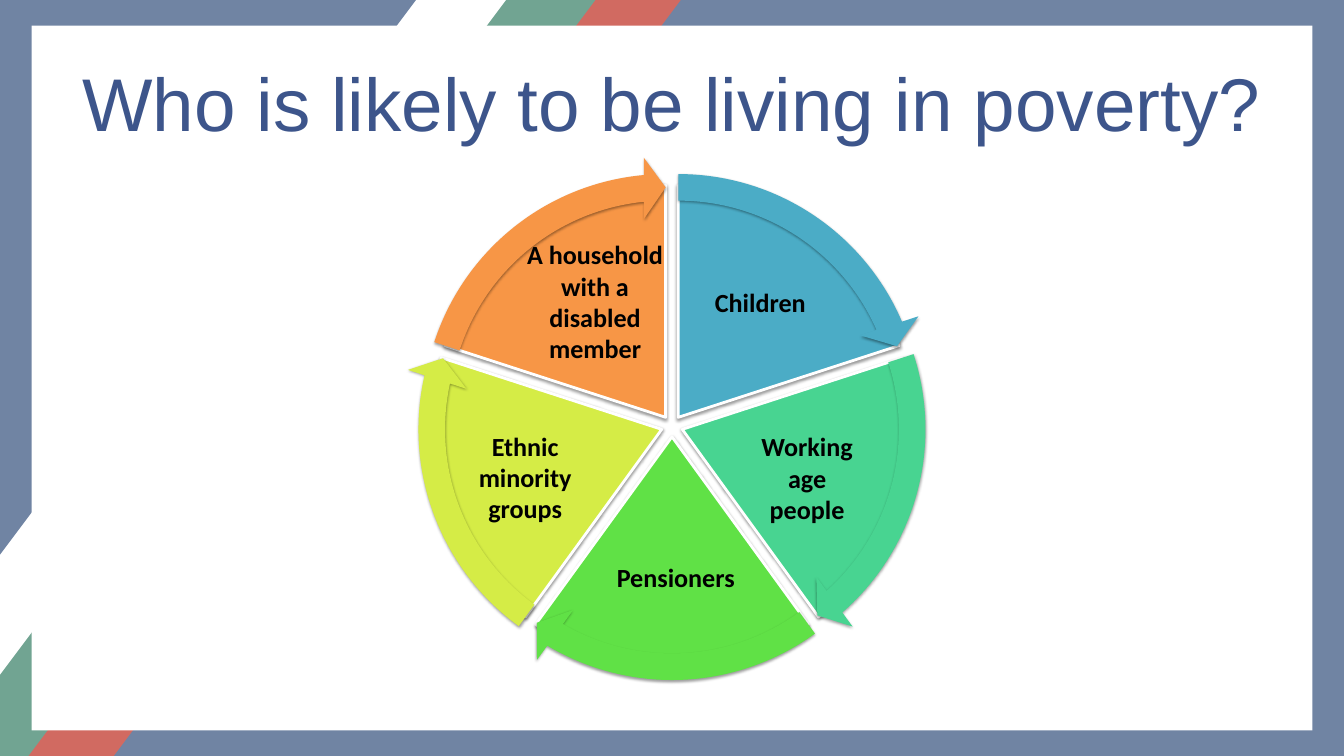
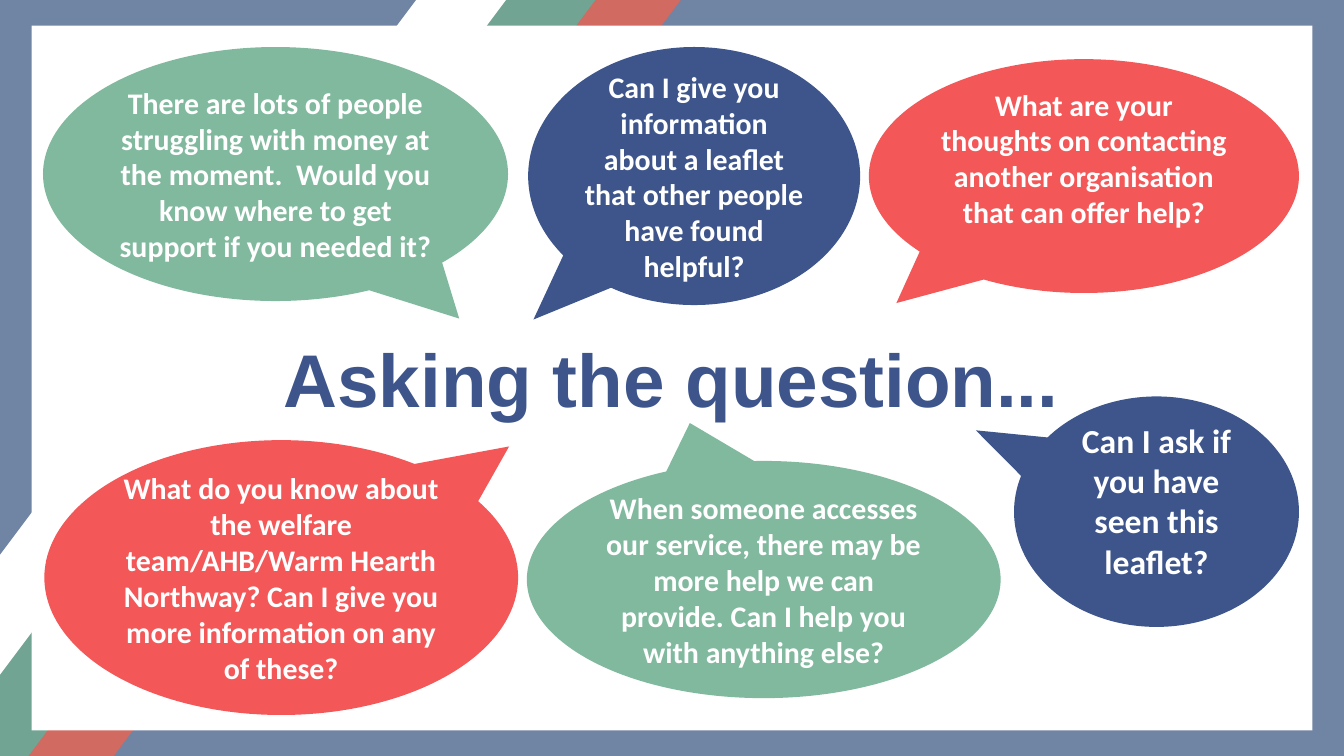
from math import cos, radians, sin

from lxml.etree import SubElement
from pptx import Presentation
from pptx.dml.color import RGBColor
from pptx.enum.shapes import MSO_SHAPE
from pptx.enum.text import MSO_ANCHOR, MSO_AUTO_SIZE, PP_ALIGN
from pptx.oxml.ns import qn
from pptx.util import Inches, Pt

COLS, ROWS = 20, 11.25
TITLE_ONLY = 5
COLORS = {
    "slate": "7084A3", "brick": "D16A61", "sage": "71A492", "white": "FFFFFF",
    "black": "000000", "navy": "3D558B", "mint": "81B99E", "coral": "F35757",
    "teal": "4BACC6", "jade": "48D491", "green": "60E146", "lime": "D5EC46",
    "orange": "F79646",
}
SLANT = 0.75
STRIPES = [("brick", 10.13), ("sage", 8.86), ("white", 7.53), ("slate", 6.19)]
SIDE, TOP = 0.47, 0.38

HUB = (10, 6.34)
PUSH, PIE, RING = 0.16, 6.9, 7.76
FIRST, SWEEP = 270, 72
UNIT = 0.6
HEAD = 3.275
WEDGES = ["teal", "jade", "green", "lime", "orange"]
GROUPS = [
    ("Children", (10.54, 4.21, 1.95, 0.57), PP_ALIGN.LEFT),
    ("Working age people", (11.12, 6.36, 1.78, 1.51), PP_ALIGN.CENTER),
    ("Pensioners", (9.08, 8.31, 1.98, 0.57), PP_ALIGN.LEFT),
    ("Ethnic minority groups", (7, 6.35, 1.63, 1.51), PP_ALIGN.CENTER),
    ("A household with a disabled member", (7.74, 3.5, 2.23, 1.99), PP_ALIGN.CENTER),
]

BUBBLES = [
    ("There are lots of people struggling with money at the moment.  Would you "
     "know where to get support if you needed it?",
     (0.64, 0.7, 6.92, 3.78), (0.395, 0.569), "mint", 32, 0.05),
    ("What are your thoughts on contacting another organisation that can offer help?",
     (12.93, 0.88, 6.4, 3.48), (-0.436, 0.543), "coral", 32, 0.59),
    ("What do you know about the welfare team/AHB/Warm Hearth Northway? Can I give "
     "you more information on any of these?",
     (0.66, 6.55, 7.05, 4.09), (0.481, -0.477), "coral", 32, 0.05),
    ("Can I give you information about a leaflet that other people have found helpful?",
     (7.86, 0.7, 4.94, 3.84), (-0.484, 0.556), "navy", 32, 0.05),
    ("When someone accesses our service, there may be more help we can provide. "
     "Can I help you with anything else?",
     (7.84, 6.86, 7.05, 3.53), (-0.156, -0.66), "mint", 32, 0.05),
    ("Can I ask if you have seen this leaflet?",
     (15.09, 5.9, 4.24, 3.43), (-0.634, -0.353), "navy", 36, 0.39),
]


def tint(name):
    """Return the named colour."""
    return RGBColor.from_string(COLORS[name])


def cells(*spans):
    """Turn columns and rows of the slide grid into lengths."""
    return [Inches(span) for span in spans]


def paint(shape, fill, line=None):
    """Fill a shape and give it a line, or none, and no shadow."""
    shape.shadow.inherit = False
    shape.fill.solid()
    shape.fill.fore_color.rgb = tint(fill)
    if line:
        shape.line.color.rgb = tint(line)
        shape.line.width = Pt(3)
    else:
        shape.line.fill.background()
    return shape


def shade(shape):
    """Drop a soft shadow straight below a shape."""
    effects = shape.element.spPr.find(qn("a:effectLst"))
    drop = SubElement(effects, qn("a:outerShdw"), blurRad=str(Pt(3.1)),
                      dist=str(Pt(1.6)), dir="5400000", rotWithShape="0")
    ink = SubElement(drop, qn("a:srgbClr"), val=COLORS["black"])
    SubElement(ink, qn("a:alpha"), val="38000")


def preset(slide, kind, box, fill, tweaks=(), line=None):
    """Add a painted preset shape with its adjustments."""
    shape = slide.shapes.add_shape(kind, *cells(*box))
    for spot, tweak in enumerate(tweaks):
        shape.adjustments[spot] = tweak
    return paint(shape, fill, line)


def write(shape, text, size, color, font="Calibri", bold=True, align=PP_ALIGN.CENTER):
    """Put one formatted paragraph into a shape."""
    frame = shape.text_frame
    frame.text = text
    frame.word_wrap = True
    para = frame.paragraphs[0]
    para.alignment = align
    face = para.runs[0].font
    face.name, face.size, face.bold = font, Pt(size), bold
    face.color.rgb = tint(color)
    return frame


def stripe(slide, fill, reach):
    """Fill the top left corner up to a slanted edge."""
    drop = reach / SLANT
    points = [(reach, 0)]
    if drop > ROWS:
        points += [(reach - ROWS * SLANT, ROWS), (0, ROWS)]
    else:
        points += [(0, drop)]
    pen = slide.shapes.build_freeform(0, 0, scale=1)
    pen.add_line_segments([cells(*point) for point in points], close=True)
    paint(pen.convert_to_shape(), fill)


def start(deck, text, box, bold):
    """Add a slide with the striped border and its title."""
    slide = deck.slides.add_slide(deck.slide_layouts[TITLE_ONLY])
    preset(slide, MSO_SHAPE.RECTANGLE, (0, 0, COLS, ROWS), "slate")
    for fill, reach in STRIPES:
        stripe(slide, fill, reach)
    panel = (SIDE, TOP, COLS - 2 * SIDE, ROWS - 2 * TOP)
    preset(slide, MSO_SHAPE.RECTANGLE, panel, "white")
    title = slide.shapes.title
    title.left, title.top, title.width, title.height = cells(*box)
    frame = write(title, text, 80, "navy", "Arial", bold)
    frame.auto_size = MSO_AUTO_SIZE.NONE
    frame.vertical_anchor = MSO_ANCHOR.TOP
    slide.shapes.element.append(title.element)
    return slide


def wheel(slide):
    """Draw five wedges pushed out from the hub, then their arrows."""
    for kind, size in ((MSO_SHAPE.PIE, PIE), (MSO_SHAPE.CIRCULAR_ARROW, RING)):
        for spot, fill in enumerate(WEDGES):
            begin = (FIRST + SWEEP * spot) % 360
            end = (begin + SWEEP) % 360
            mid = radians(begin + SWEEP / 2)
            left = HUB[0] + PUSH * cos(mid) - size / 2
            top = HUB[1] + PUSH * sin(mid) - size / 2
            if kind == MSO_SHAPE.PIE:
                tweaks, line = (begin * UNIT, end * UNIT), "white"
            else:
                tweaks = (0.051, HEAD, end * UNIT - HEAD, begin * UNIT, 0.059)
                line = None
            shade(preset(slide, kind, (left, top, size, size), fill, tweaks, line))


def label(slide, text, box, align):
    """Name one group on the wheel."""
    area = slide.shapes.add_textbox(*cells(*box))
    write(area, text, 28, "black", align=align)


def bubble(slide, text, box, tip, fill, size, foot):
    """Add a speech bubble with its tip and bottom margin."""
    shape = preset(slide, MSO_SHAPE.OVAL_CALLOUT, box, fill, tip)
    frame = write(shape, text, size, "white")
    frame.vertical_anchor = MSO_ANCHOR.MIDDLE
    frame.margin_bottom = Inches(foot)


def main():
    """Build both slides and save them."""
    deck = Presentation()
    deck.slide_width, deck.slide_height = cells(COLS, ROWS)
    slide = start(deck, "Who is likely to be living in poverty?",
                  (0.46, 0.79, 19.08, 1.45), False)
    wheel(slide)
    for group in GROUPS:
        label(slide, *group)
    slide = start(deck, "Asking the question...", (4.08, 4.9, 11.83, 1.45), True)
    for item in BUBBLES:
        bubble(slide, *item)
    deck.save("out.pptx")


if __name__ == "__main__":
    main()
